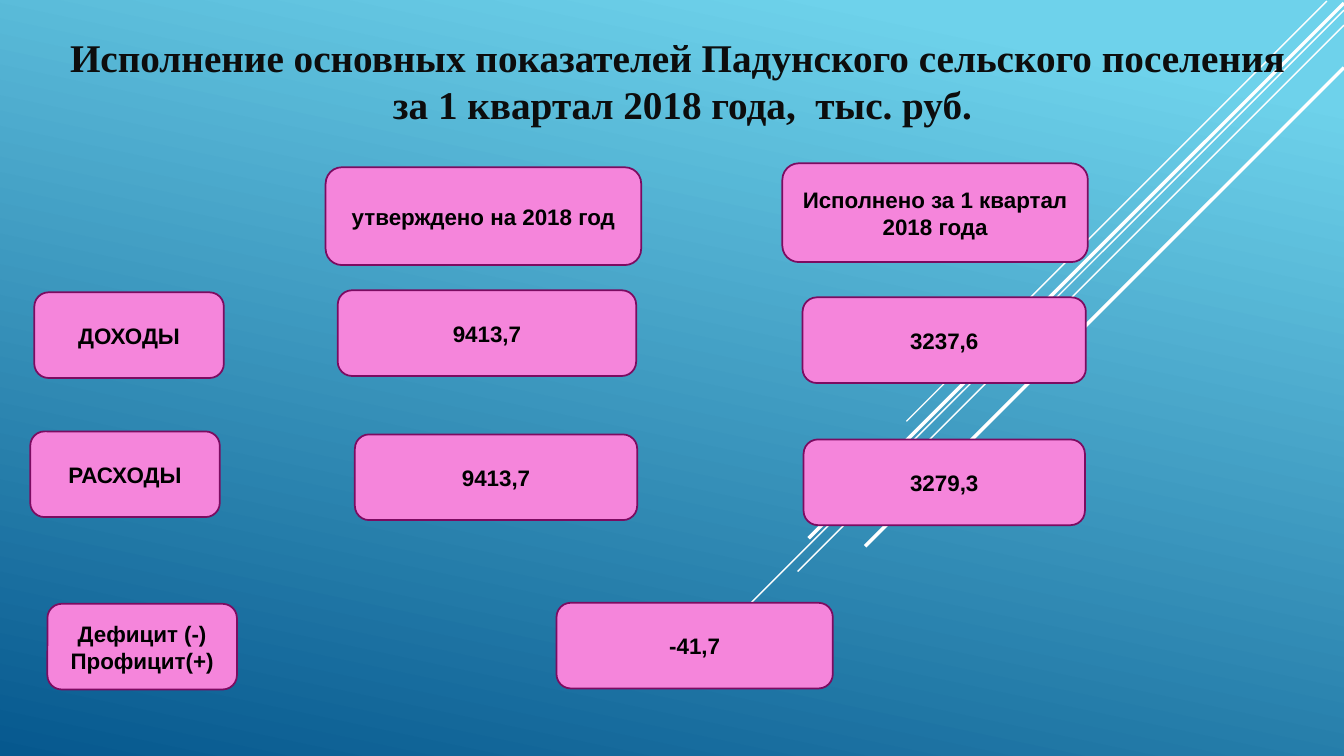
from lxml import etree
from pptx import Presentation
from pptx.dml.color import RGBColor
from pptx.enum import shapes, text
from pptx.oxml.ns import qn
from pptx.util import Inches, Pt


def color(hex_value):
    return RGBColor.from_string(hex_value)


def write_centered(frame, content, font_name, size, hex_value):
    """Fill a text frame with bold centred text, one paragraph per line."""
    frame.text = content
    frame.word_wrap = True
    for paragraph in frame.paragraphs:
        paragraph.alignment = text.PP_ALIGN.CENTER
        paragraph.font.name = font_name
        paragraph.font.size = Pt(size)
        paragraph.font.bold = True
        paragraph.font.color.rgb = color(hex_value)


presentation = Presentation()
presentation.slide_width = Inches(13.33)
presentation.slide_height = Inches(7.5)
slide = presentation.slides.add_slide(presentation.slide_layouts[5])

# Background
background = slide.background.fill
background.gradient()
background.gradient_angle = 360 - 102
gradient_stops = [(0.1, "6ED2EB"), (1, "06588E")]
for stop, (position, hex_value) in zip(background.gradient_stops, gradient_stops):
    stop.position = position
    stop.color.rgb = color(hex_value)

# Diagonal rays: start x, start y, length along each axis, width
rays = [
    (13.16, 0.01, 4.17, 1),
    (13.33, 0.10, 6.65, 1),
    (13.33, 0.25, 5.42, 1),
    (13.33, 0.03, 5.31, 2.5),
    (13.33, 0.67, 4.75, 2.5),
]
for x, y, reach, width in rays:
    ray = slide.shapes.add_connector(
        shapes.MSO_CONNECTOR.STRAIGHT,
        Inches(x), Inches(y), Inches(x - reach), Inches(y + reach))
    ray.line.color.rgb = color("FFFFFF")
    ray.line.width = Pt(width)
    etree.SubElement(ray.element.spPr, qn("a:effectLst"))

# Title, brought in front of the rays
title = slide.shapes.title
title.left, title.top = Inches(0.11), Inches(0.28)
title.width, title.height = Inches(13.22), Inches(1.03)
write_centered(
    title.text_frame,
    "Исполнение основных показателей Падунского сельского поселения\n"
    " за 1 квартал 2018 года,  тыс. руб.",
    "Times New Roman", 28, "0D0D0D")
title.text_frame.vertical_anchor = text.MSO_ANCHOR.TOP
title.text_frame.auto_size = text.MSO_AUTO_SIZE.SHAPE_TO_FIT_TEXT
ray.element.getparent().append(title.element)

# Boxes: left, top, width, height, text
ROW_HEIGHT = 0.85
boxes = [
    (0.34, 2.90, 1.88, ROW_HEIGHT, "ДОХОДЫ"),
    (0.30, 4.28, 1.88, ROW_HEIGHT, "РАСХОДЫ"),
    (0.47, 5.99, 1.88, ROW_HEIGHT, "Дефицит (-)\nПрофицит(+)"),
    (3.23, 1.66, 3.13, 0.97, "утверждено на 2018 год"),
    (7.76, 1.62, 3.03, 0.98, "Исполнено за 1 квартал 2018 года"),
    (3.35, 2.88, 2.96, ROW_HEIGHT, "9413,7"),
    (7.96, 2.95, 2.81, ROW_HEIGHT, "3237,6"),
    (3.52, 4.31, 2.80, ROW_HEIGHT, "9413,7"),
    (7.97, 4.36, 2.79, ROW_HEIGHT, "3279,3"),
    (5.52, 5.98, 2.74, ROW_HEIGHT, "-41,7"),
]
for left, top, width, height, content in boxes:
    box = slide.shapes.add_shape(
        shapes.MSO_SHAPE.ROUNDED_RECTANGLE,
        Inches(left), Inches(top), Inches(width), Inches(height))
    box.shadow.inherit = False
    box.fill.solid()
    box.fill.fore_color.rgb = color("F585DB")
    box.line.color.rgb = color("7C0B61")
    box.line.width = Pt(1.25)
    box.text_frame.vertical_anchor = text.MSO_ANCHOR.MIDDLE
    write_centered(box.text_frame, content, "Arial", 16, "000000")

presentation.save("out.pptx")
